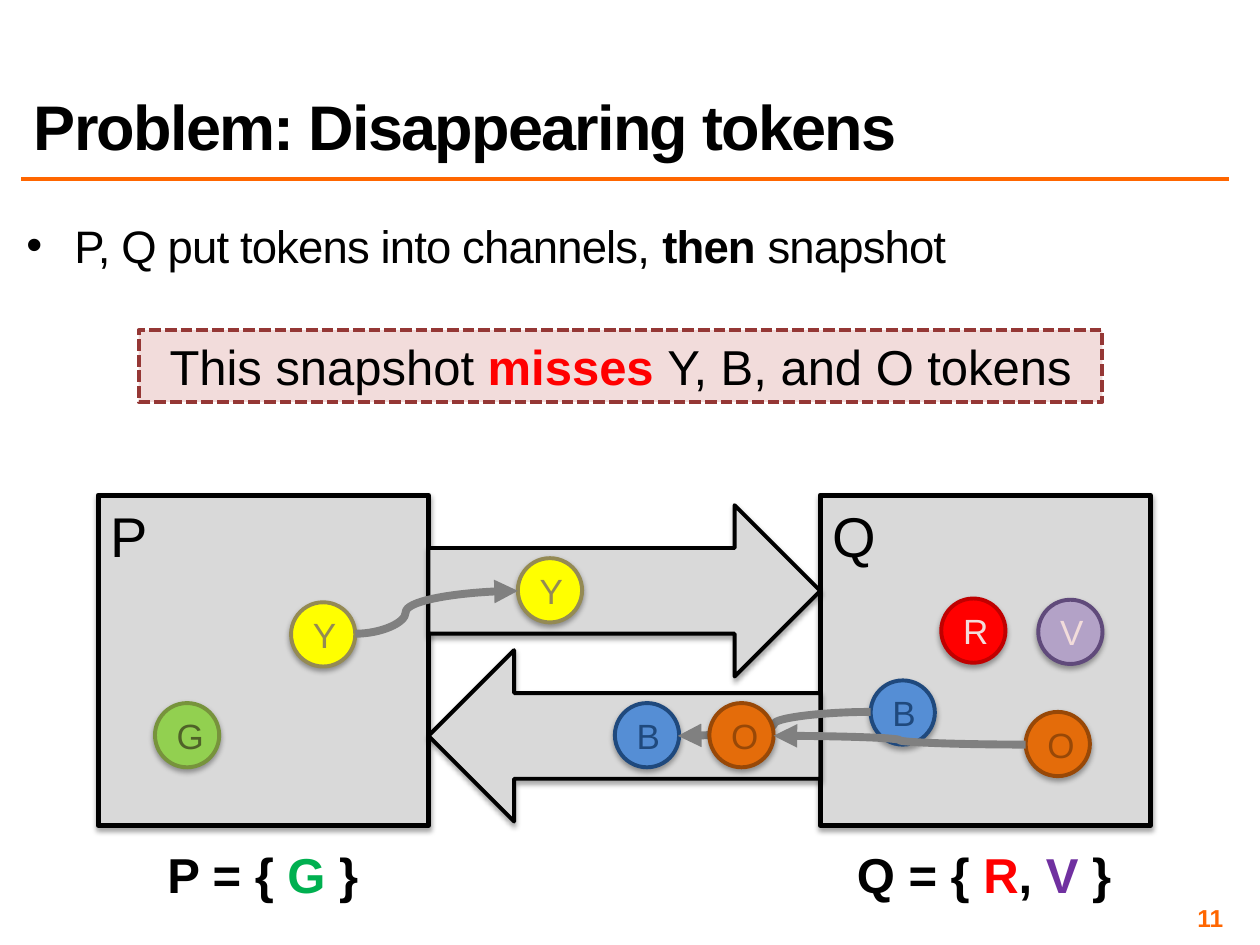
"""Builds the slide on tokens that vanish from a distributed snapshot."""
from lxml import etree
from pptx import Presentation
from pptx.dml.color import RGBColor
from pptx.enum import dml, shapes, text
from pptx.oxml import ns
from pptx.util import Inches, Pt

BLACK, WHITE = RGBColor(0, 0, 0), RGBColor(255, 255, 255)
ORANGE, GREY = RGBColor(0xFF, 0x66, 0x00), RGBColor(0x80, 0x80, 0x80)
PANEL, PINK = RGBColor(0xD9, 0xD9, 0xD9), RGBColor(0xF2, 0xDC, 0xDB)
RED, MAROON = RGBColor(0xFF, 0, 0), RGBColor(0x95, 0x37, 0x35)
GREEN, VIOLET = RGBColor(0, 0xB0, 0x50), RGBColor(0x70, 0x30, 0xA0)
NAVY, RUST = RGBColor(0x1F, 0x49, 0x7D), RGBColor(0x98, 0x48, 0x07)
OLIVE = RGBColor(0x94, 0x8A, 0x54)

SHAPE, ALIGN, ANCHOR = shapes.MSO_SHAPE, text.PP_ALIGN, text.MSO_ANCHOR
DIAMETER = 0.51
SLIM = 0.04

# fill, outline, letter
TOKENS = {
    "R": (RED, RGBColor(0xC0, 0, 0), PINK),
    "G": (RGBColor(0x92, 0xD0, 0x50), RGBColor(0x77, 0x93, 0x3C), RGBColor(0x4F, 0x62, 0x28)),
    "B": (RGBColor(0x55, 0x8E, 0xD5), NAVY, NAVY),
    "O": (RGBColor(0xE4, 0x6C, 0x0A), RUST, RUST),
    "V": (RGBColor(0xB3, 0xA2, 0xC7), RGBColor(0x60, 0x4A, 0x7B), PINK),
    "Y": (RGBColor(0xFF, 0xFF, 0), OLIVE, OLIVE),
}
PROCESSES = [("P", 0.78), ("Q", 6.51)]
CHANNELS = [(4.01, 0), (5.16, 180)]
HELD = [("R", 7.47, 4.75), ("G", 1.23, 5.58), ("B", 6.91, 5.4),
        ("O", 8.14, 5.65), ("V", 8.24, 4.76), ("Y", 2.31, 4.78)]
# token in the channel, then the ends and bend of the arrow leading to it
SENT = [("Y", 4.11, 4.43, (2.82, 5.03), (4.11, 4.69), 0.31),
        ("B", 4.88, 5.58, (6.91, 5.65), (5.38, 5.84), 0.5),
        ("O", 5.63, 5.58, (8.14, 5.91), (6.14, 5.84), 0.5)]
# runs are (wording, colour, bold)
TITLE = [("Problem: Disappearing tokens", BLACK, True)]
BULLET = [("P, Q put tokens into channels, ", BLACK, False), ("then", BLACK, True),
          (" snapshot", BLACK, False)]
CALLOUT = [("This snapshot ", BLACK, False), ("misses ", RED, True),
           ("Y, B, and O tokens", BLACK, False)]
STATES = [
    ((1.22, 6.65, 1.73, 0.57),
     [("P = { ", BLACK, True), ("G", GREEN, True), (" }", BLACK, True)]),
    ((6.69, 6.65, 2.24, 0.57),
     [("Q = { ", BLACK, True), ("R", RED, True), (", ", BLACK, True),
      ("V", VIOLET, True), (" }", BLACK, True)]),
]


def add_xml(parent, tag, **attrs):
    return etree.SubElement(parent, ns.qn(tag), attrs)


def write(sp, runs, size, align=ALIGN.LEFT, anchor=ANCHOR.TOP, wrap=True, inset=None, spacing=0):
    tf = sp.text_frame
    tf.word_wrap, tf.vertical_anchor = wrap, anchor
    if inset is not None:
        tf.margin_left = tf.margin_right = tf.margin_top = tf.margin_bottom = Inches(inset)
    p = tf.paragraphs[0]
    p.alignment = align
    for wording, colour, bold in runs:
        r = p.add_run()
        r.text = wording
        r.font.name, r.font.size, r.font.bold = "Arial", Pt(size), bold
        r.font.color.rgb = colour
        if spacing:
            r.font._element.set("spc", str(int(spacing * 100)))
    return p


def add_box(s, box):
    return s.shapes.add_textbox(*map(Inches, box))


def add_outlined(s, kind, box, fill, line, width, shadow=True):
    sp = s.shapes.add_shape(kind, *map(Inches, box))
    sp.fill.solid()
    sp.fill.fore_color.rgb = fill
    sp.line.color.rgb, sp.line.width = line, Pt(width)
    sp.shadow.inherit = False
    if shadow:
        effects = sp._element.spPr.find(ns.qn("a:effectLst"))
        outer = add_xml(effects, "a:outerShdw", blurRad=str(Pt(3.1)), dist=str(Pt(1.8)),
                        dir="5400000", rotWithShape="0")
        colour = add_xml(outer, "a:srgbClr", val="000000")
        add_xml(colour, "a:alpha", val="35000")
    return sp


def add_token(s, name, x, y):
    fill, line, letter = TOKENS[name]
    sp = add_outlined(s, SHAPE.OVAL, (x, y, DIAMETER, DIAMETER), fill, line, 2.25)
    write(sp, [(name, letter, False)], 20, ALIGN.CENTER, ANCHOR.MIDDLE)


def add_line(s, kind, start, end, colour, width):
    line = s.shapes.add_connector(kind, *map(Inches, start + end))
    line.line.color.rgb, line.line.width = colour, Pt(width)
    add_xml(line._element.spPr, "a:effectLst")
    return line


def add_move(s, start, end, bend):
    move = add_line(s, shapes.MSO_CONNECTOR.CURVE, start, end, GREY, 4.5)
    add_xml(move.line._get_or_add_ln(), "a:tailEnd", type="triangle")
    guides = move._element.spPr.find(ns.qn("a:prstGeom")).get_or_add_avLst()
    add_xml(guides, "a:gd", name="adj1", fmla=f"val {round(bend * 100000)}")


def main():
    prs = Presentation()
    prs.slide_width, prs.slide_height = Inches(10), Inches(7.5)
    s = prs.slides.add_slide(prs.slide_layouts[6])
    s.background.fill.solid()
    s.background.fill.fore_color.rgb = WHITE

    add_line(s, shapes.MSO_CONNECTOR.STRAIGHT, (0.17, 1.42), (9.75, 1.42), ORANGE, 2)
    p = write(add_box(s, (0.17, 0.17, 9.58, 1.17)), TITLE, 36, anchor=ANCHOR.BOTTOM, spacing=-1)
    p.line_spacing = 0.8
    p = write(add_box(s, (0.17, 1.77, 9.58, 0.71)), BULLET, 26, inset=SLIM, spacing=-0.5)
    p.line_spacing, p.space_before = 0.8, Pt(5.2)
    pPr = p._p.get_or_add_pPr()
    pPr.set("marL", str(Inches(0.38)))
    pPr.set("indent", str(Inches(-0.38)))
    add_xml(pPr, "a:buFont", typeface="Arial")
    add_xml(pPr, "a:buChar", char="•")
    write(add_box(s, (7.42, 7.17, 2.33, 0.23)), [("11", ORANGE, True)], 14,
          ALIGN.RIGHT, ANCHOR.MIDDLE, inset=SLIM)

    for name, x in PROCESSES:
        sp = add_outlined(s, SHAPE.RECTANGLE, (x, 3.93, 2.62, 2.62), PANEL, BLACK, 3)
        write(sp, [(name, BLACK, False)], 32)
    for y, turn in CHANNELS:
        sp = add_outlined(s, SHAPE.RIGHT_ARROW, (3.4, y, 3.11, 1.36), PANEL, BLACK, 2.25)
        sp.rotation = turn
    for token in HELD:
        add_token(s, *token)
    for name, x, y, start, end, bend in SENT:
        add_token(s, name, x, y)
        add_move(s, start, end, bend)
    for box, runs in STATES:
        write(add_box(s, box), runs, 28, ALIGN.CENTER, wrap=False)

    sp = add_outlined(s, SHAPE.RECTANGLE, (1.1, 2.62, 7.65, 0.57), PINK, MAROON, 2.25, shadow=False)
    sp.line.dash_style = dml.MSO_LINE.SQUARE_DOT
    write(sp, CALLOUT, 28, ALIGN.CENTER)

    prs.save("out.pptx")


if __name__ == "__main__":
    main()
